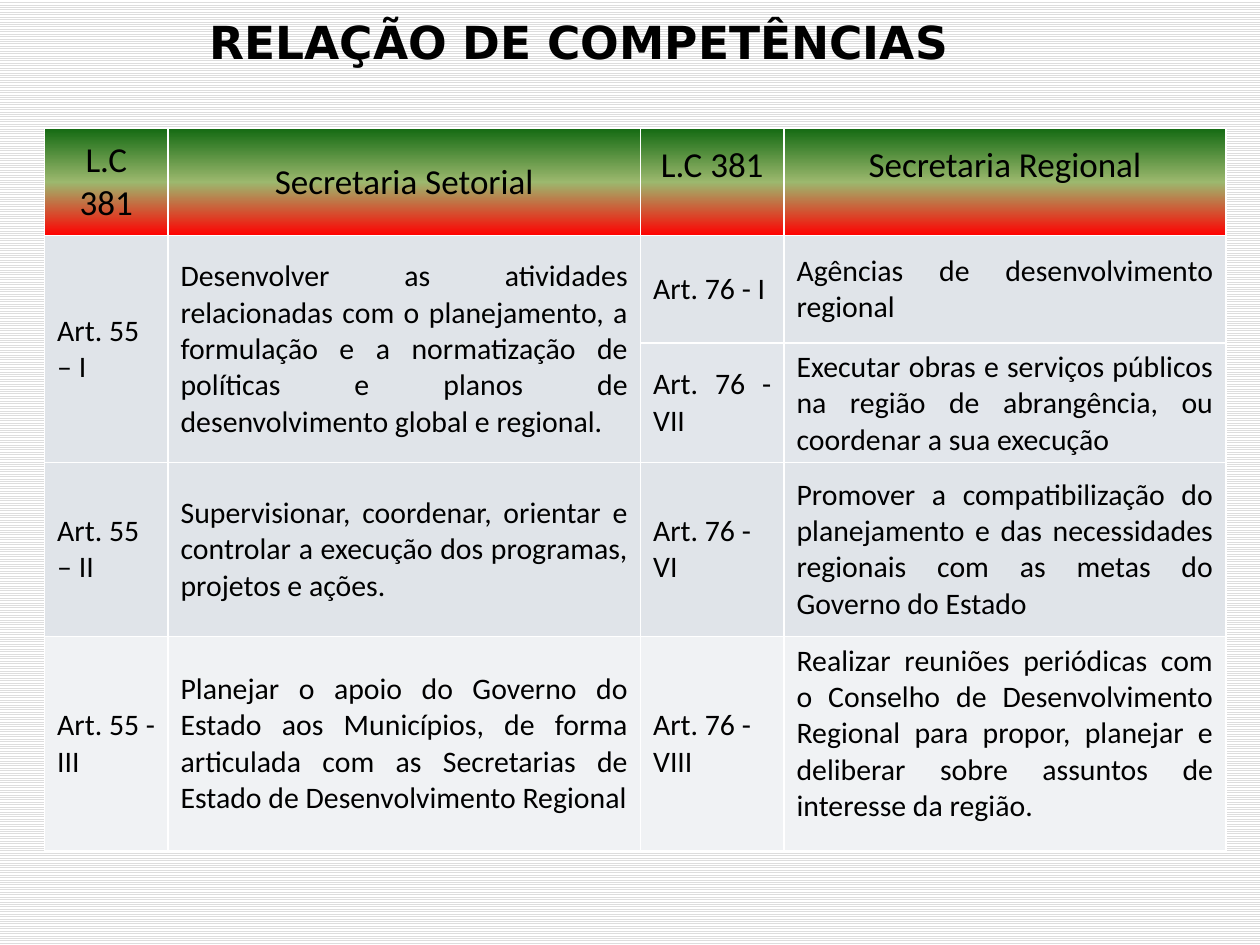
from dataclasses import dataclass

from pptx import Presentation
from pptx.dml.color import RGBColor
from pptx.enum.dml import MSO_PATTERN
from pptx.enum.text import MSO_ANCHOR as Anchor, MSO_AUTO_SIZE as AutoSize, PP_ALIGN as Align
from pptx.oxml import parse_xml
from pptx.oxml.ns import nsdecls
from pptx.util import Pt


@dataclass(frozen=True)
class Theme:
    title_font: str = "DejaVu Sans"
    table_font: str = "Calibri"
    title_size: int = 26
    header_size: int = 20
    body_size: int = 17
    text: str = "000000"
    border: str = "FFFFFF"
    page: str = "FFFFFF"
    page_lines: str = "DDDDDD"
    row_fills: tuple = ("E0E4E9", "E2E6EB", "E0E4E9", "F0F2F4")
    header_stops: tuple = ((0, "FF0000"), (50, "9CB86E"), (100, "156B13"))


THEME = Theme()
COLUMN_WIDTHS = (70.5, 270, 82, 252.5)
ROW_HEIGHTS = (61.2, 61.2, 61.2, 99.4, 122.4)

# Each header: text, anchor, bottom margin
HEADERS = (
    ("L.C 381", Anchor.MIDDLE, 3.6),
    ("Secretaria Setorial", Anchor.MIDDLE, 3.6),
    ("L.C 381", Anchor.BOTTOM, 28),
    ("Secretaria Regional", Anchor.BOTTOM, 28),
)
# None continues the cell above
BODY = (
    ("Art. 55 – I",
     "Desenvolver as atividades relacionadas com o planejamento, a formulação e a "
     "normatização de políticas e planos de desenvolvimento global e regional.",
     "Art. 76 - I",
     "Agências de desenvolvimento regional"),
    (None, None,
     "Art. 76 - VII",
     "Executar obras e serviços públicos na região de abrangência, ou coordenar a sua execução"),
    ("Art. 55 – II",
     "Supervisionar, coordenar, orientar e controlar a execução dos programas, projetos e ações.",
     "Art. 76 - VI",
     "Promover a compatibilização do planejamento e das necessidades regionais com as "
     "metas do Governo do Estado"),
    ("Art. 55 - III",
     "Planejar o apoio do Governo do Estado aos Municípios, de forma articulada com as "
     "Secretarias de Estado de Desenvolvimento Regional",
     "Art. 76 - VIII",
     "Realizar reuniões periódicas com o Conselho de Desenvolvimento Regional para propor, "
     "planejar e deliberar sobre assuntos de interesse da região."),
)


def rgb(value):
    return RGBColor.from_string(value)


def write(frame, text, font, size, align, bold=False):
    frame.text = text
    para = frame.paragraphs[0]
    para.alignment = align
    for span in para.runs:
        span.font.name = font
        span.font.size = Pt(size)
        span.font.bold = bold
        span.font.color.rgb = rgb(THEME.text)


def paint_background(page):
    fill = page.background.fill
    fill.patterned()
    fill.pattern = MSO_PATTERN.LIGHT_HORIZONTAL
    fill.fore_color.rgb = rgb(THEME.page_lines)
    fill.back_color.rgb = rgb(THEME.page)


def add_title(page):
    box = page.shapes.add_textbox(Pt(26), Pt(4.3), Pt(610), Pt(39))
    frame = box.text_frame
    frame.word_wrap = True
    frame.auto_size = AutoSize.SHAPE_TO_FIT_TEXT
    write(frame, "RELAÇÃO DE COMPETÊNCIAS", THEME.title_font, THEME.title_size,
          Align.CENTER, bold=True)


def add_borders(cell):
    properties = cell._tc.get_or_add_tcPr()
    for side in ("lnL", "lnR", "lnT", "lnB"):
        properties.append(parse_xml(
            f'<a:{side} {nsdecls("a")} w="{Pt(1)}"><a:solidFill>'
            f'<a:srgbClr val="{THEME.border}"/></a:solidFill></a:{side}>'))


def fill_header(cell):
    """Fill with the three-stop gradient, running from bottom to top."""
    stops = "".join(
        f'<a:gs pos="{position * 1000}"><a:srgbClr val="{color}"/></a:gs>'
        for position, color in THEME.header_stops)
    cell._tc.get_or_add_tcPr().append(parse_xml(
        f'<a:gradFill {nsdecls("a")} rotWithShape="1"><a:gsLst>{stops}</a:gsLst>'
        '<a:lin ang="16200000" scaled="0"/></a:gradFill>'))


def fill_body(cell, color):
    cell.fill.solid()
    cell.fill.fore_color.rgb = rgb(color)


def body_alignment(row, column):
    justified = column % 2 == 1 or (row, column) == (2, 2)
    return Align.JUSTIFY if justified else Align.LEFT


def add_competence_table(page):
    table = page.shapes.add_table(
        len(ROW_HEIGHTS), len(COLUMN_WIDTHS), Pt(25.5), Pt(73.5),
        Pt(sum(COLUMN_WIDTHS)), Pt(sum(ROW_HEIGHTS))).table
    table.first_row = False
    table.horz_banding = False
    for column, width in zip(table.columns, COLUMN_WIDTHS):
        column.width = Pt(width)
    for row, height in zip(table.rows, ROW_HEIGHTS):
        row.height = Pt(height)
    for cell in table.iter_cells():
        add_borders(cell)

    for column, (text, anchor, bottom) in enumerate(HEADERS):
        cell = table.cell(0, column)
        fill_header(cell)
        cell.vertical_anchor = anchor
        cell.margin_bottom = Pt(bottom)
        write(cell.text_frame, text, THEME.table_font, THEME.header_size, Align.CENTER)

    for row, (texts, color) in enumerate(zip(BODY, THEME.row_fills), start=1):
        for column, text in enumerate(texts):
            cell = table.cell(row, column)
            fill_body(cell, color)
            if text is None:
                table.cell(row - 1, column).merge(cell)
                continue
            cell.vertical_anchor = Anchor.MIDDLE
            write(cell.text_frame, text, THEME.table_font, THEME.body_size,
                  body_alignment(row, column))
    table.cell(len(BODY), len(HEADERS) - 1).vertical_anchor = Anchor.TOP


def main():
    deck = Presentation()
    deck.slide_width, deck.slide_height = Pt(720), Pt(540)
    page = deck.slides.add_slide(deck.slide_layouts[6])
    paint_background(page)
    add_title(page)
    add_competence_table(page)
    deck.save("out.pptx")


if __name__ == "__main__":
    main()
